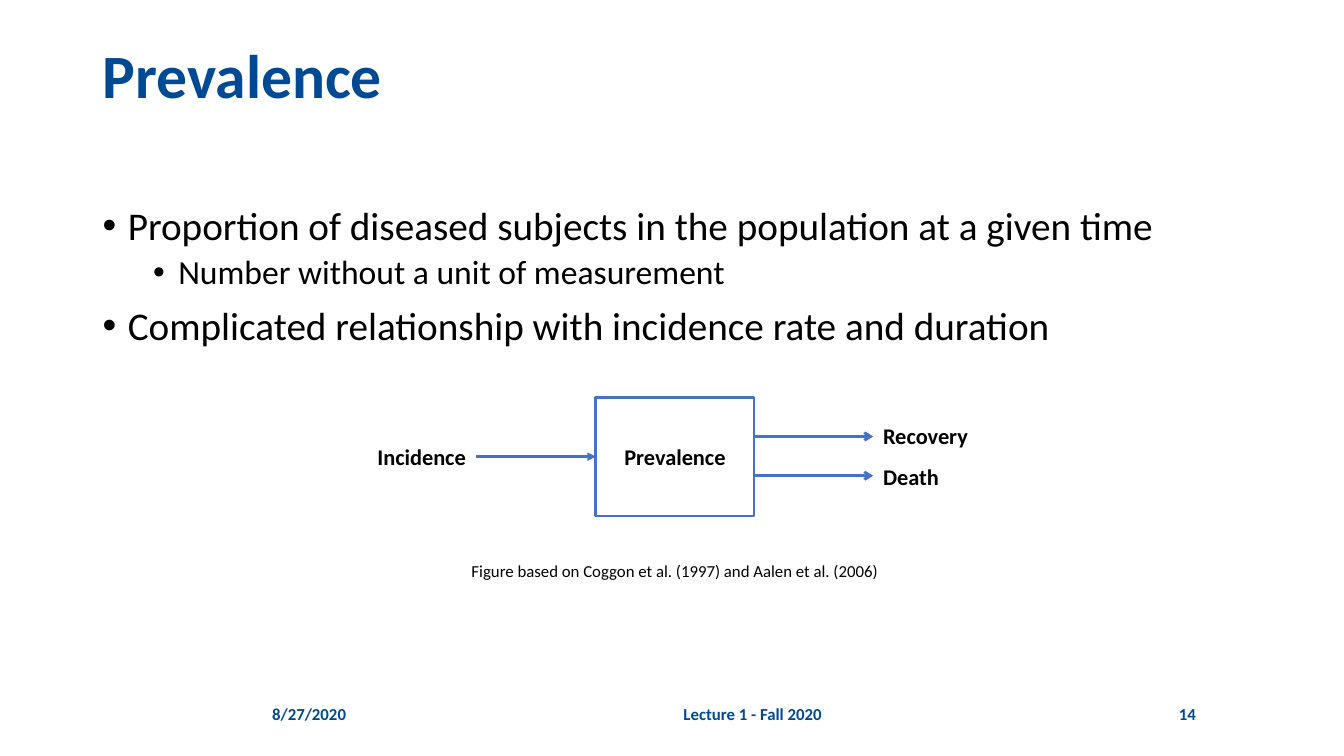
from dataclasses import dataclass

from lxml import etree
from pptx import Presentation
from pptx.dml.color import RGBColor
from pptx.enum import shapes, text
from pptx.oxml.ns import qn
from pptx.util import Inches, Pt

COLORS = {"heading": "004A93", "ink": "000000", "diagram": "4472C4"}
FONT = "Calibri"
LINE_WIDTH = Pt(2)
LEFT, CENTER, RIGHT = text.PP_ALIGN.LEFT, text.PP_ALIGN.CENTER, text.PP_ALIGN.RIGHT
TOP, MIDDLE = text.MSO_ANCHOR.TOP, text.MSO_ANCHOR.MIDDLE


@dataclass
class Label:
    content: str
    left: float
    top: float
    width: float
    height: float
    size: float = 16
    color: str = "ink"
    bold: bool = True
    align: text.PP_ALIGN = LEFT
    anchor: text.MSO_ANCHOR = MIDDLE
    spacing: float = 1.0


@dataclass
class Bullet:
    content: str
    size: float
    indent: float
    before: float


@dataclass
class Arrow:
    start: float
    end: float
    level: float
    head: str


LABELS = [
    Label("Prevalence", 0.92, 0.4, 11.5, 1.45, size=44, color="heading",
          anchor=TOP, spacing=0.9),
    Label("8/27/2020", 2.6, 6.88, 1.31, 0.4, size=12, color="heading"),
    Label("Lecture 1 - Fall 2020", 4.07, 6.88, 6.79, 0.4, size=12,
          color="heading", align=CENTER),
    Label("14", 11.02, 6.88, 0.94, 0.4, size=12, color="heading", align=RIGHT),
    Label("Incidence", 3.15, 4.33, 1.57, 0.39, align=RIGHT),
    Label("Recovery", 8.66, 4.13, 1.57, 0.39),
    Label("Death", 8.66, 4.53, 1.57, 0.39),
    Label("Figure based on Coggon et al. (1997) and Aalen et al. (2006)",
          4.53, 5.51, 4.33, 0.3, size=12, bold=False, align=CENTER, anchor=TOP),
]
STATE = Label("Prevalence", 5.91, 3.94, 1.57, 1.18, align=CENTER)
BULLETS = [
    Bullet("Proportion of diseased subjects in the population at a given time", 28, 0.25, 0),
    Bullet("Number without a unit of measurement", 24, 0.75, 5),
    Bullet("Complicated relationship with incidence rate and duration", 28, 0.25, 10),
]
ARROWS = [
    Arrow(4.72, 5.91, 4.53, "triangle"),
    Arrow(7.48, 8.66, 4.33, "arrow"),
    Arrow(7.48, 8.66, 4.72, "arrow"),
]


def rgb(name: str) -> RGBColor:
    return RGBColor.from_string(COLORS[name])


def write(para, content: str, *, size: float, color: str = "ink", bold: bool = False,
          align: text.PP_ALIGN = LEFT, spacing: float = 1.0, before: float = 0) -> None:
    """Add formatted text to a paragraph."""
    para.alignment = align
    para.line_spacing = spacing
    para.space_before = Pt(before)
    span = para.add_run()
    span.text = content
    span.font.name = FONT
    span.font.size = Pt(size)
    span.font.bold = bold
    span.font.color.rgb = rgb(color)


def fill_label(box, label: Label) -> None:
    frame = box.text_frame
    frame.word_wrap = True
    frame.vertical_anchor = label.anchor
    write(frame.paragraphs[0], label.content, size=label.size, color=label.color,
          bold=label.bold, align=label.align, spacing=label.spacing)


def place(label: Label) -> tuple:
    return tuple(Inches(side) for side in (label.left, label.top, label.width, label.height))


def add_label(page, label: Label) -> None:
    fill_label(page.shapes.add_textbox(*place(label)), label)


def add_state(page, label: Label) -> None:
    box = page.shapes.add_shape(shapes.MSO_SHAPE.RECTANGLE, *place(label))
    box.shadow.inherit = False
    box.fill.background()
    box.line.color.rgb = rgb("diagram")
    box.line.width = LINE_WIDTH
    fill_label(box, label)


def add_bullets(page, bullets: list[Bullet]) -> None:
    box = page.shapes.add_textbox(Inches(0.92), Inches(2), Inches(11.5), Inches(4))
    frame = box.text_frame
    frame.word_wrap = True
    for index, bullet in enumerate(bullets):
        para = frame.add_paragraph() if index else frame.paragraphs[0]
        properties = para._p.get_or_add_pPr()
        properties.set("marL", str(Inches(bullet.indent)))
        properties.set("indent", str(Inches(-0.25)))
        etree.SubElement(properties, qn("a:buFont"), typeface="Arial")
        etree.SubElement(properties, qn("a:buChar"), char="•")
        write(para, bullet.content, size=bullet.size, spacing=0.9, before=bullet.before)


def add_arrow(page, arrow: Arrow) -> None:
    line = page.shapes.add_connector(
        shapes.MSO_CONNECTOR.STRAIGHT, Inches(arrow.start), Inches(arrow.level),
        Inches(arrow.end), Inches(arrow.level))
    line.line.color.rgb = rgb("diagram")
    line.line.width = LINE_WIDTH
    etree.SubElement(line.line._get_or_add_ln(), qn("a:tailEnd"), type=arrow.head)
    etree.SubElement(line._element.spPr, qn("a:effectLst"))


def main() -> None:
    deck = Presentation()
    deck.slide_width, deck.slide_height = Inches(13.33), Inches(7.5)
    page = deck.slides.add_slide(deck.slide_layouts[6])
    for label in LABELS:
        add_label(page, label)
    add_bullets(page, BULLETS)
    add_state(page, STATE)
    for arrow in ARROWS:
        add_arrow(page, arrow)
    deck.save("out.pptx")


if __name__ == "__main__":
    main()
